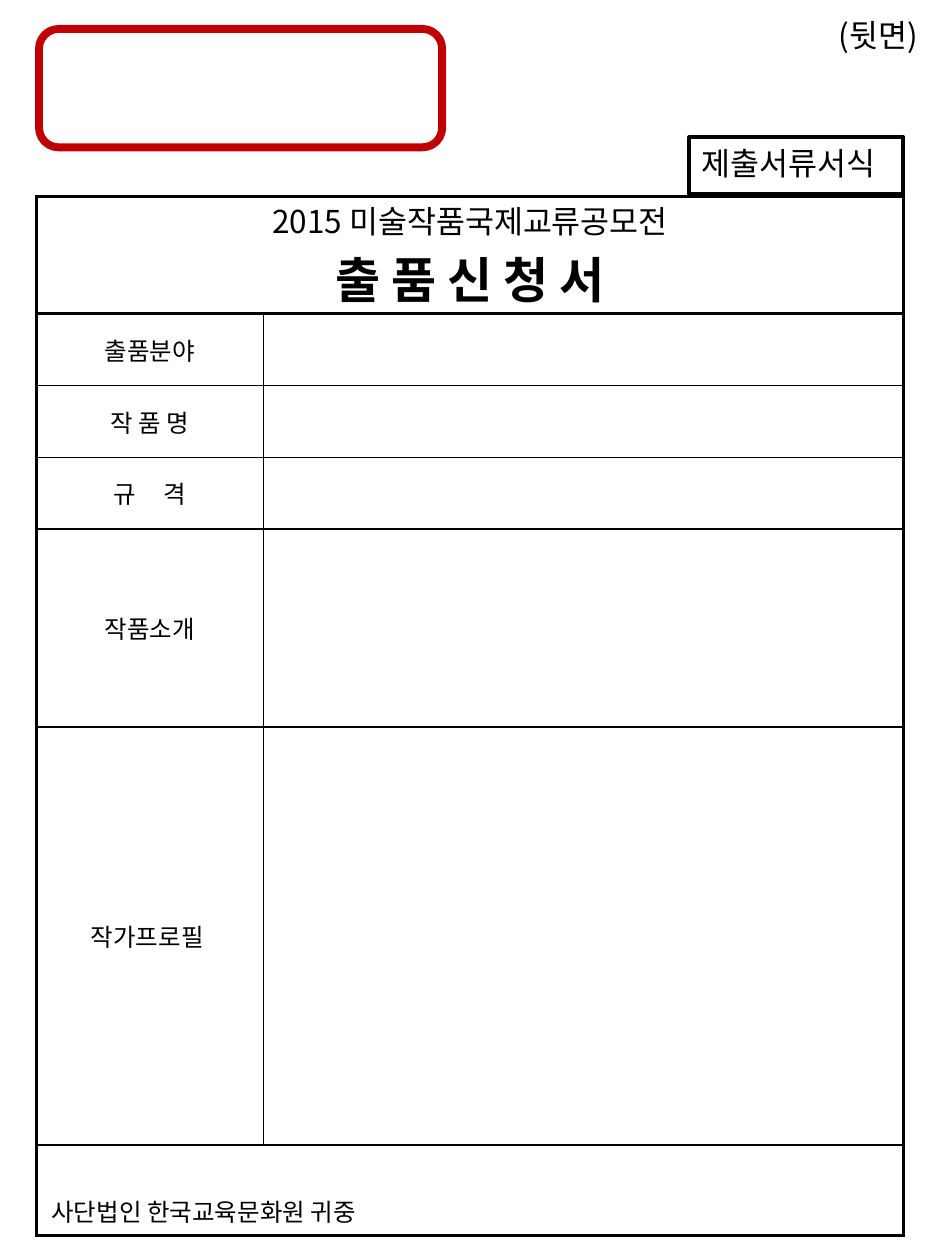
from lxml import etree
from pptx import Presentation
from pptx.dml.color import RGBColor
from pptx.enum.shapes import MSO_SHAPE
from pptx.enum.text import MSO_ANCHOR, PP_ALIGN
from pptx.oxml.ns import qn
from pptx.util import Inches, Pt

RECTANGLE, ROUNDED = MSO_SHAPE.RECTANGLE, MSO_SHAPE.ROUNDED_RECTANGLE
LEFT, CENTER = PP_ALIGN.LEFT, PP_ALIGN.CENTER
TOP, MIDDLE = MSO_ANCHOR.TOP, MSO_ANCHOR.MIDDLE
BLACK = RGBColor(0x00, 0x00, 0x00)
RED = RGBColor(0xC0, 0x00, 0x00)
KOREAN = "Noto Sans CJK KR"
THICK, THIN = 2.25, 1
COLUMNS = [1.8, 5.08]
ROWS = [0.93, 0.57, 0.57, 0.57, 1.57, 3.32, 0.72]
LABELS = ["출품분야", "작 품 명", "규     격", "작품소개", "작가프로필 "]


def write(para, text, size=14, bold=False, align=LEFT):
    para.alignment = align
    span = para.add_run()
    span.text = text
    span.font.size = Pt(size)
    span.font.bold = bold
    span.font.color.rgb = BLACK
    span.font.name = KOREAN
    etree.SubElement(span._r.get_or_add_rPr(), qn("a:ea"), typeface=KOREAN)


def set_borders(cell, **widths):
    properties = cell._tc.get_or_add_tcPr()
    for position, side in enumerate(["L", "R", "T", "B"]):
        line = etree.Element(qn("a:ln" + side), w=str(Pt(widths[side])))
        fill = etree.SubElement(line, qn("a:solidFill"))
        etree.SubElement(fill, qn("a:srgbClr"), val=str(BLACK))
        properties.insert(position, line)


deck = Presentation()
deck.slide_width, deck.slide_height = Inches(7.5), Inches(10)
page = deck.slides.add_slide(deck.slide_layouts[6])

for kind, place, color, weight in [
    (RECTANGLE, (5.47, 1.09, 1.7, 0.45), BLACK, THICK),
    (ROUNDED, (0.31, 0.23, 3.2, 0.94), RED, 4.5),
]:
    frame = page.shapes.add_shape(kind, *map(Inches, place))
    frame.shadow.inherit = False
    frame.fill.background()
    frame.line.color.rgb = color
    frame.line.width = Pt(weight)

form = page.shapes.add_table(len(ROWS), len(COLUMNS), Inches(0.29), Inches(1.56),
                             Inches(sum(COLUMNS)), Inches(sum(ROWS))).table
form.first_row = form.horz_banding = False
for column, width in zip(form.columns, COLUMNS):
    column.width = Inches(width)
last = len(ROWS) - 1
for index, height in enumerate(ROWS):
    form.rows[index].height = Inches(height)
    for side in range(2):
        cell = form.cell(index, side)
        cell.fill.background()
        whole = index in (0, last)
        set_borders(cell,
                    L=THICK if whole or side == 0 else THIN,
                    R=THICK if whole or side == 1 else THIN,
                    T=THICK if index < 2 else THIN,
                    B=THICK if whole else THIN)
for index in (0, last):
    form.cell(index, 0).merge(form.cell(index, 1))

heading = form.cell(0, 0)
heading.vertical_anchor = TOP
heading.margin_top = heading.margin_bottom = 0
write(heading.text_frame.paragraphs[0], "2015 미술작품국제교류공모전", size=18, align=CENTER)
write(heading.text_frame.add_paragraph(), "출 품 신 청 서", size=28, bold=True, align=CENTER)
for index, label in enumerate(LABELS, 1):
    cell = form.cell(index, 0)
    cell.vertical_anchor = MIDDLE
    write(cell.text_frame.paragraphs[0], label, align=CENTER)

for text, place, size in [
    ("제출서류서식", (5.47, 1.09, 1.72, 0.4), 18),
    ("사단법인 한국교육문화원 귀중", (0.31, 9.45, 2.88, 0.34), 14),
    ("(뒷면)", (6.56, 0.08, 0.9, 0.4), 18),
]:
    box = page.shapes.add_textbox(*map(Inches, place)).text_frame
    box.word_wrap = True
    write(box.paragraphs[0], text, size=size)

deck.save("out.pptx")
